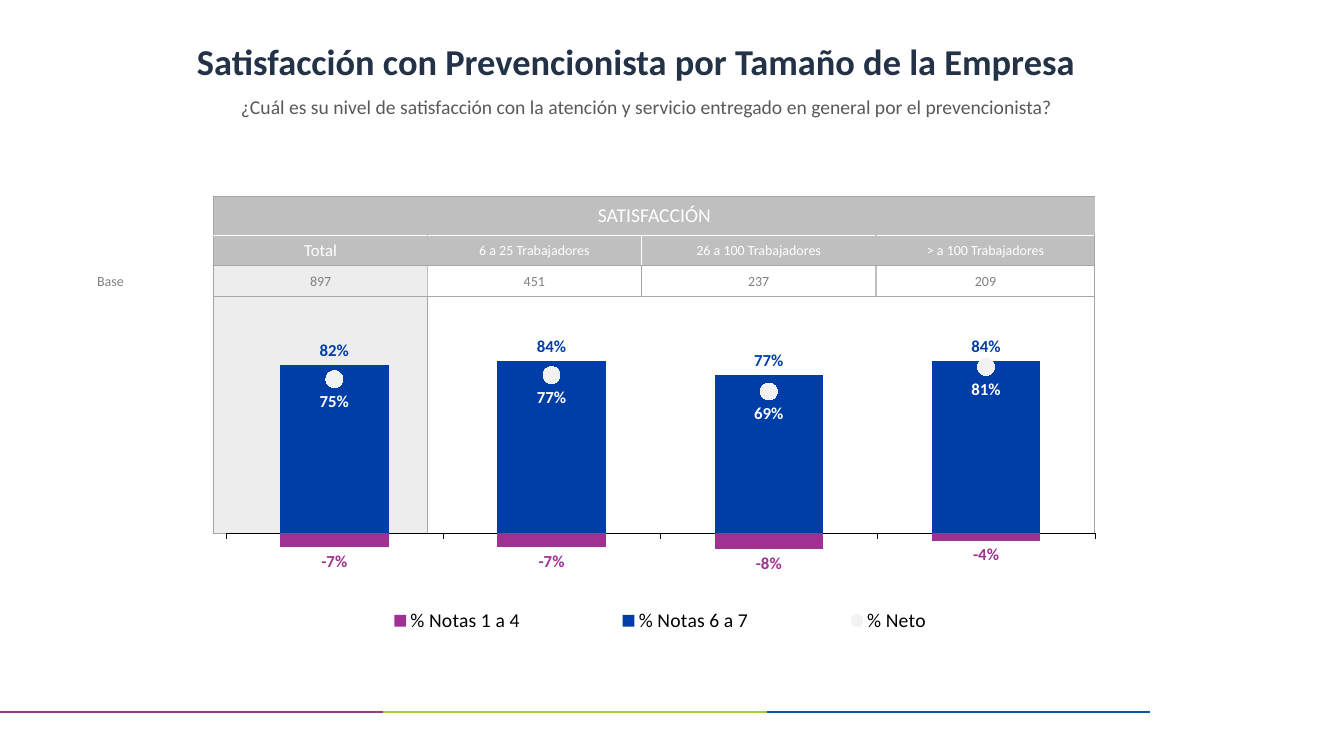
from itertools import product
from lxml.etree import SubElement
from pptx import Presentation
from pptx.chart.data import CategoryChartData
from pptx.dml.color import RGBColor
from pptx.enum.chart import (XL_CHART_TYPE, XL_LABEL_POSITION, XL_LEGEND_POSITION,
                             XL_MARKER_STYLE, XL_TICK_LABEL_POSITION, XL_TICK_MARK)
from pptx.enum.shapes import MSO_CONNECTOR
from pptx.enum.text import MSO_ANCHOR, PP_ALIGN
from pptx.oxml import parse_xml
from pptx.oxml.ns import nsdecls, qn
from pptx.util import Inches, Pt

HUES = {"navy": "233247", "text": "595959", "grey": "808080", "head": "BFBFBF",
        "edge": "A6A6A6", "pale": "EDEDED", "white": "FFFFFF", "black": "000000",
        "plum": "A03192", "blue": "003EA7", "dot": "F2F2F2",
        "rule1": "963791", "rule2": "A2CD3A", "rule3": "0B56A4"}


def hue(name):
    return RGBColor.from_string(HUES[name])


def style(font, size, color, bold=False, face="Calibri"):
    font.size, font.bold, font.name = Pt(size), bold, face
    font.color.rgb = hue(color)


def write(frame, words, size=10, color="grey", bold=False, lines=1.0, before=0):
    para = frame.paragraphs[0]
    para.alignment = PP_ALIGN.CENTER
    para.line_spacing = lines
    para.space_before = Pt(before)
    run = para.add_run()
    run.text = words
    style(run.font, size, color, bold)


def lay(node, spot, x, y, wide, high, inner=False):
    for old in node.findall(qn("c:layout")):
        node.remove(old)
    box = parse_xml(f"<c:layout {nsdecls('c')}><c:manualLayout/></c:layout>")
    parts = [("layoutTarget", "inner")] if inner else []
    parts += [("xMode", "edge"), ("yMode", "edge"),
              ("x", x), ("y", y), ("w", wide), ("h", high)]
    for tag, val in parts:
        SubElement(box[0], qn(f"c:{tag}")).set("val", str(val))
    node.insert(spot, box)


def edge(cell, sides):
    props = cell._tc.get_or_add_tcPr()
    for spot, (side, color) in enumerate(zip("LRTB", sides)):
        paint = (f'<a:solidFill><a:srgbClr val="{HUES[color]}"/></a:solidFill>'
                 if color else "<a:noFill/>")
        props.insert(spot, parse_xml(
            f'<a:ln{side} {nsdecls("a")} w="12700">{paint}</a:ln{side}>'))


class Page:
    def __init__(self, deck):
        self.wide, self.high = deck.slide_width, deck.slide_height
        self.slide = deck.slides.add_slide(deck.slide_layouts[6])
        self.shapes = self.slide.shapes

    def x(self, share):
        return round(self.wide * share / 100)

    def y(self, share):
        return round(self.high * share / 100)

    def box(self, x, y, wide, high):
        return self.x(x), self.y(y), self.x(wide), self.y(high)

    def rule(self, x, end, y, color):
        line = self.shapes.add_connector(
            MSO_CONNECTOR.STRAIGHT, self.x(x), self.y(y), self.x(end), self.y(y))
        line.line.color.rgb = hue(color)
        line.line.width = Pt(1.5)
        SubElement(line._element.spPr, qn("a:effectLst"))

    def text(self, place, words, anchor=MSO_ANCHOR.TOP, **form):
        frame = self.shapes.add_textbox(*self.box(*place)).text_frame
        frame.word_wrap = True
        frame.vertical_anchor = anchor
        write(frame, words, **form)

    def table(self, place, cols, rows, words, sizes, fills, uprights, levels):
        grid = self.shapes.add_table(len(rows), len(cols), *self.box(*place)).table
        grid.first_row = grid.horz_banding = False
        for col, share in zip(grid.columns, cols):
            col.width = self.x(share)
        for row, share in zip(grid.rows, rows):
            row.height = self.y(share)
        for r, c in product(range(len(rows)), range(len(cols))):
            cell = grid.cell(r, c)
            cell.margin_left = cell.margin_right = Inches(0.02)
            cell.margin_top = cell.margin_bottom = 0
            cell.vertical_anchor = MSO_ANCHOR.MIDDLE
            if fills[r][c]:
                cell.fill.solid()
                cell.fill.fore_color.rgb = hue(fills[r][c])
            else:
                cell.fill.background()
            flats = levels[r:r + 2] if c else ["white"] * 2
            edge(cell, uprights[r][c:c + 2] + flats)
            if words[r][c]:
                size = sizes.get((r, c), 10)
                write(cell.text_frame, words[r][c], size=size, before=size * 0.2,
                      color="white" if r < 2 else "grey")
        grid.cell(0, 1).merge(grid.cell(0, 4))
        grid.cell(3, 2).merge(grid.cell(3, 3))

    def chart(self, place, cats, data):
        feed = CategoryChartData(number_format="0%")
        feed.categories = cats
        for name, (vals, *_) in data.items():
            feed.add_series(name, vals)
        chart = self.shapes.add_chart(
            XL_CHART_TYPE.COLUMN_CLUSTERED, *self.box(*place), feed).chart
        chart.has_title = False
        style(chart.font, 13.7, "black", True, "TeX Gyre Adventor")
        self.split(chart)
        bars, dots = chart.plots
        bars.gap_width, bars.overlap = 100, 100
        bars.vary_by_categories = False
        for part, (_, fill, ink, pos) in zip([*bars.series, *dots.series], data.values()):
            tags = part.data_labels
            tags.show_value, tags.position = True, pos
            tags.number_format, tags.number_format_is_linked = "0%", False
            style(tags.font, 12, ink, True)
            if fill:
                part.invert_if_negative = False
                part.format.fill.solid()
                part.format.fill.fore_color.rgb = hue(fill)
        self.dots(dots.series[0])
        self.axes(chart)
        chart.has_legend = True
        key = chart.legend
        key.position, key.include_in_layout = XL_LEGEND_POSITION.BOTTOM, False
        style(key.font, 14, "black")
        lay(key._element, 1, 0.12, 0.73, 0.8, 0.08)

    def split(self, chart):
        area = chart._chartSpace.chart.plotArea
        bar = area.find(qn("c:barChart"))
        last = bar.findall(qn("c:ser"))[-1]
        for node in last.findall(qn("c:invertIfNegative")):
            last.remove(node)
        axes = "".join(f'<c:axId val="{node.get("val")}"/>'
                       for node in bar.findall(qn("c:axId")))
        line = parse_xml(f'<c:lineChart {nsdecls("c")}><c:grouping val="standard"/>'
                         f'<c:varyColors val="0"/><c:marker val="1"/>{axes}</c:lineChart>')
        line.insert(2, last)
        bar.addnext(line)
        lay(area, 0, 0.04, 0.11, 0.96, 0.74, True)

    def dots(self, part):
        part.smooth = False
        part.format.line.fill.background()
        mark = part.marker
        mark.style, mark.size = XL_MARKER_STYLE.CIRCLE, 12
        mark.format.fill.solid()
        mark.format.fill.fore_color.rgb = hue("dot")
        mark.format.line.fill.background()

    def axes(self, chart):
        side, base = chart.value_axis, chart.category_axis
        side.minimum_scale, side.maximum_scale, side.major_unit = -0.6, 1, 0.2
        side.has_major_gridlines = side.visible = False
        base.tick_label_position = XL_TICK_LABEL_POSITION.NONE
        base.major_tick_mark = XL_TICK_MARK.OUTSIDE
        base.format.line.color.rgb = hue("black")
        base.format.line.width = Pt(0.25)


def main():
    deck = Presentation()
    deck.slide_width, deck.slide_height = Inches(13.33), Inches(7.5)
    page = Page(deck)
    step = 28.53
    for i in range(3):
        page.rule(i * step, (i + 1) * step, 94.13, f"rule{i + 1}")
    page.text((6.9, 4.4, 80.95, 8.13), "Satisfacción con Prevencionista por Tamaño de la Empresa",
              MSO_ANCHOR.MIDDLE, size=26, color="navy", bold=True, lines=0.9)
    page.text((7.65, 11.87, 80.95, 7.6),
              "¿Cuál es su nivel de satisfacción con la atención y servicio "
              "entregado en general por el prevencionista?", size=14, color="text")
    page.table(
        (0.53, 26, 80.95, 44.53), (15.38, 15.9, 15.9, 17.48, 16.28), (5.15, 4, 4.1, 31.3),
        [["", "SATISFACCIÓN", "", "", ""],
         ["", "Total", "6 a 25 Trabajadores", "26 a 100 Trabajadores", "> a 100 Trabajadores"],
         ["Base", "897", "451", "237", "209"], [""] * 5],
        {(0, 1): 14, (1, 1): 12},
        [["", *["head"] * 4]] * 2 + [["", "pale", "", "", ""]] * 2,
        [["white", "edge", "", "", "", "edge"],
         ["white", "edge", "head", "white", "head", "edge"],
         ["white", "edge", "head", "edge", "head", "edge"],
         ["white", "edge", "edge", "", "", "edge"]],
        ["edge", "white", "edge", "edge", "edge"])
    out, below = XL_LABEL_POSITION.OUTSIDE_END, XL_LABEL_POSITION.BELOW
    page.chart((14.1, 36.93, 67.37, 58.67), "1234", {
        "% Notas 1 a 4": ((-0.07, -0.07, -0.08, -0.04), "plum", "plum", out),
        "% Notas 6 a 7": ((0.82, 0.84, 0.77, 0.84), "blue", "blue", out),
        "% Neto": ((0.75, 0.77, 0.69, 0.81), "", "white", below)})
    deck.save("out.pptx")


if __name__ == "__main__":
    main()
